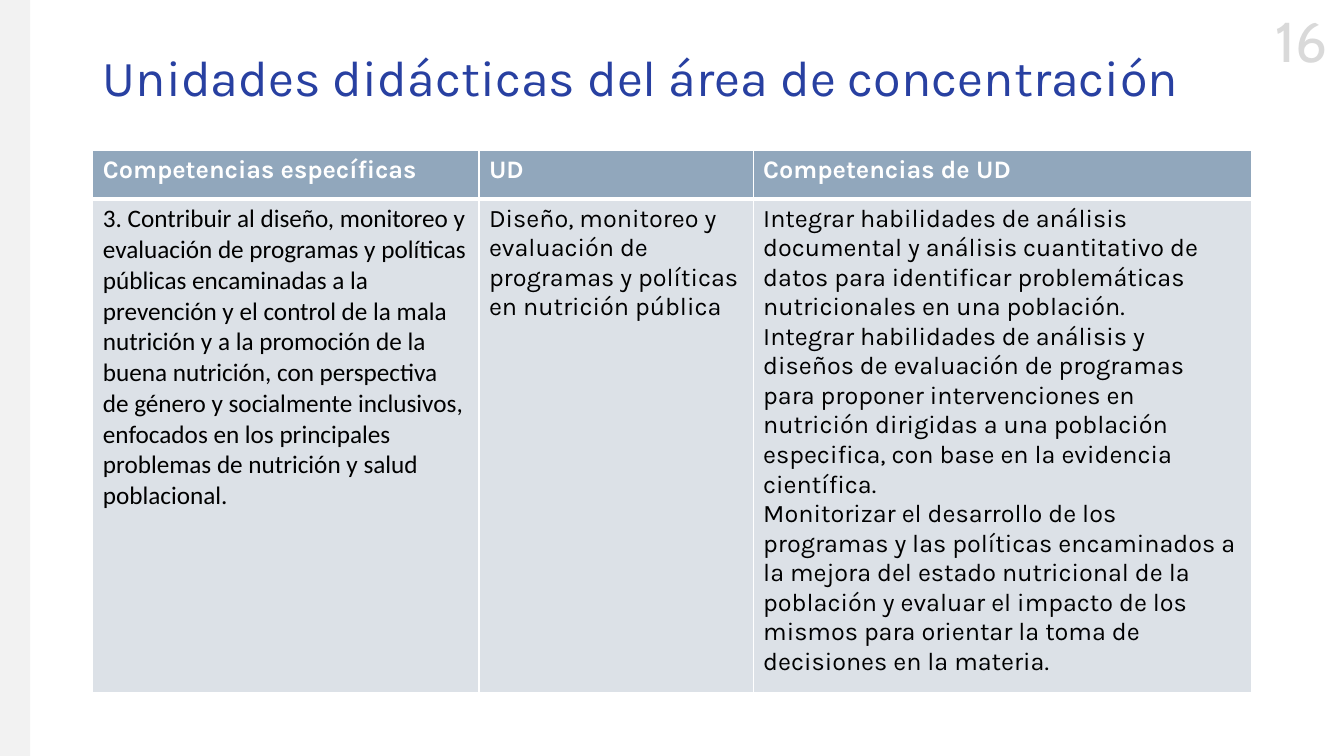
import pptx
import pptx.dml.color
import pptx.enum.shapes
import pptx.enum.text
import pptx.oxml
import pptx.oxml.ns
import pptx.util

Cm = pptx.util.Cm
RGB = pptx.dml.color.RGBColor
ALIGN = pptx.enum.text.PP_ALIGN
ANCHOR = pptx.enum.text.MSO_ANCHOR

WHITE = RGB(0xFF, 0xFF, 0xFF)
BLACK = RGB(0, 0, 0)
BLUE = RGB(0x28, 0x40, 0xA1)
STEEL = RGB(0x91, 0xA7, 0xBC)
PALE = RGB(0xDC, 0xE1, 0xE7)
GREY = RGB(0xD9, 0xD9, 0xD9)
BAND = RGB(0xF2, 0xF2, 0xF2)


def write(frame, text, font="Karla", size=18, color=BLACK, bold=False,
          align=ALIGN.LEFT, space=None):
    """Fill a text frame, one paragraph for each line of text."""
    frame.text = text
    for para in frame.paragraphs:
        para.alignment = align
        para.line_spacing = space
        for run in para.runs:
            run.font.name = font
            run.font.size = pptx.util.Pt(size)
            run.font.bold = bold
            run.font.color.rgb = color


def edge(cell, low):
    """Draw white cell borders; low is the width of the bottom one in points."""
    props = cell._tc.get_or_add_tcPr()
    for i, (side, width) in enumerate((("L", 1), ("R", 1), ("T", 1), ("B", low))):
        line = pptx.oxml.parse_xml(
            f'<a:ln{side} {pptx.oxml.ns.nsdecls("a")} w="{pptx.util.Pt(width)}">'
            f'<a:solidFill><a:srgbClr val="{WHITE}"/></a:solidFill></a:ln{side}>')
        props.insert(i, line)


deck = pptx.Presentation()
deck.slide_width = Cm(33.87)
deck.slide_height = Cm(19.05)
slide = deck.slides.add_slide(deck.slide_layouts[6])
shapes = slide.shapes

# Page number and side band
page = shapes.add_textbox(Cm(31.85), Cm(0.05), Cm(1.9), Cm(1.96)).text_frame
page.word_wrap = False
write(page, "16", font="Cabin", size=40, color=GREY, align=ALIGN.CENTER)

band = shapes.add_shape(pptx.enum.shapes.MSO_SHAPE.RECTANGLE,
                        0, 0, Cm(0.76), deck.slide_height)
band.shadow.inherit = False
band.fill.solid()
band.fill.fore_color.rgb = BAND
band.line.fill.background()

# Title
title = shapes.add_textbox(Cm(2.34), Cm(1.02), Cm(29.21), Cm(2)).text_frame
title.word_wrap = True
title.vertical_anchor = ANCHOR.MIDDLE
write(title, "Unidades didácticas del área de concentración",
      size=36, color=BLUE, space=0.9)

# Table
HEADS = ("Competencias específicas", "UD", "Competencias de UD")
BODY = (
    "3. Contribuir al diseño, monitoreo y evaluación de programas y políticas "
    "públicas encaminadas a la prevención y el control de la mala nutrición y a "
    "la promoción de la buena nutrición, con perspectiva de género y socialmente "
    "inclusivos, enfocados en los principales problemas de nutrición y salud "
    "poblacional.",
    "Diseño, monitoreo y evaluación de programas y políticas en nutrición pública",
    "Integrar habilidades de análisis documental y análisis cuantitativo de datos "
    "para identificar problemáticas nutricionales en una población.\n"
    "Integrar habilidades de análisis y diseños de evaluación de programas para "
    "proponer intervenciones en nutrición dirigidas a una población especifica, "
    "con base en la evidencia científica.\n"
    "Monitorizar el desarrollo de los programas y las políticas encaminados a la "
    "mejora del estado nutricional de la población y evaluar el impacto de los "
    "mismos para orientar la toma de decisiones en la materia.",
)
WIDTHS = (9.73, 6.91, 12.57)
HEIGHTS = (1.22, 12.19)

table = shapes.add_table(2, 3, Cm(2.34), Cm(3.79),
                         Cm(sum(WIDTHS)), Cm(sum(HEIGHTS))).table
for row, height in zip(table.rows, HEIGHTS):
    row.height = Cm(height)
for c, (width, head, body) in enumerate(zip(WIDTHS, HEADS, BODY)):
    table.columns[c].width = Cm(width)
    top, main = table.cell(0, c), table.cell(1, c)
    write(top.text_frame, head, color=WHITE, bold=True)
    write(main.text_frame, body, font="Karla" if c else "Calibri")
    for cell, fill, low in ((top, STEEL, 3), (main, PALE, 1)):
        cell.fill.solid()
        cell.fill.fore_color.rgb = fill
        edge(cell, low)

deck.save("out.pptx")
